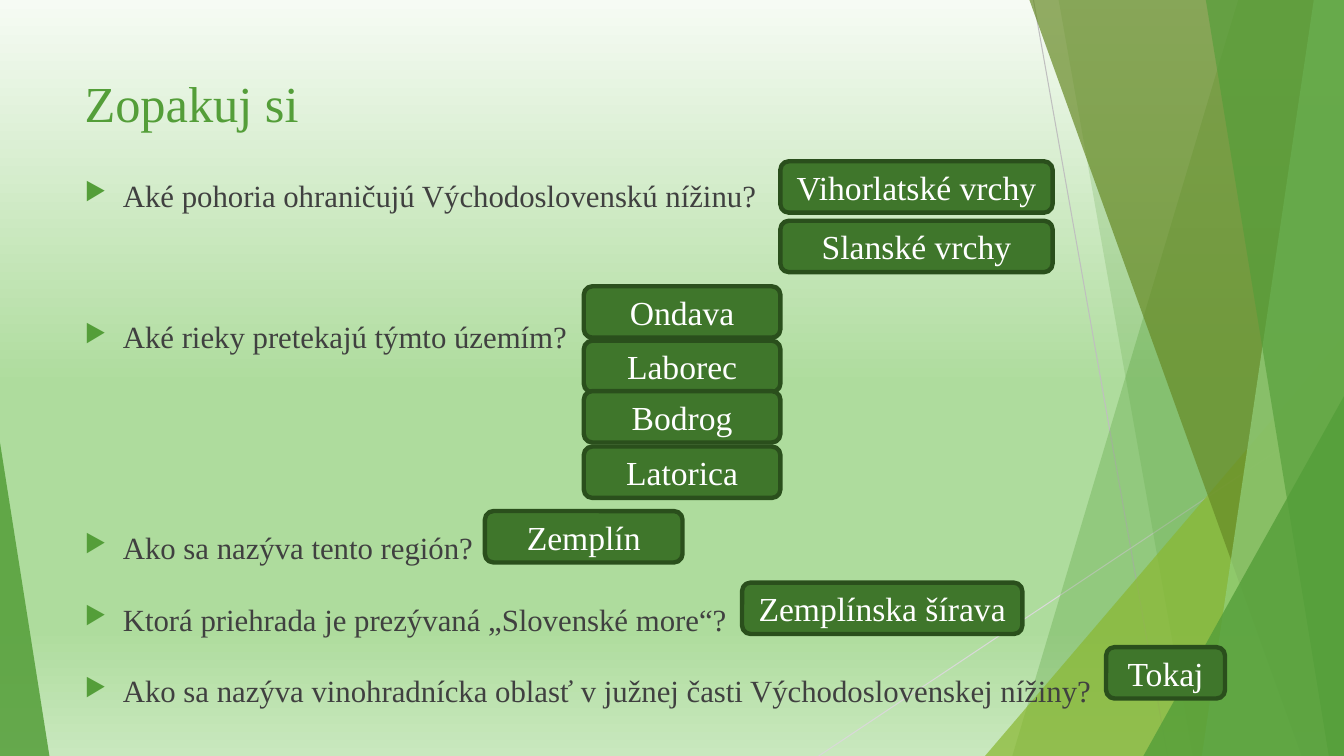
from lxml import etree
from pptx import Presentation
from pptx.dml.color import RGBColor
from pptx.enum.shapes import MSO_CONNECTOR, MSO_SHAPE
from pptx.enum.text import MSO_ANCHOR, PP_ALIGN
from pptx.oxml.ns import qn
from pptx.util import Inches, Pt

STRAIGHT = MSO_CONNECTOR.STRAIGHT
TRIANGLE, ROUNDED = MSO_SHAPE.RIGHT_TRIANGLE, MSO_SHAPE.ROUNDED_RECTANGLE
TRIANGLE = MSO_SHAPE.ISOSCELES_TRIANGLE
TOP, MIDDLE, CENTER = MSO_ANCHOR.TOP, MSO_ANCHOR.MIDDLE, PP_ALIGN.CENTER
W, H = 13.33, 7.5


def rgb(color):
    return RGBColor.from_string(color)


def child(parent, tag, **attrs):
    return etree.SubElement(parent, qn(tag), {k: str(v) for k, v in attrs.items()})


class Deck:
    FONT, GREEN, TEXT = "Times New Roman", "549E39", "404040"
    BOX, BORDER, WHITE = "3F762B", "2A4F1C", "FFFFFF"

    def __init__(self):
        self.prs = Presentation()
        self.prs.slide_width, self.prs.slide_height = Inches(W), Inches(H)
        self.s = self.prs.slides.add_slide(self.prs.slide_layouts[6])

    def background(self, stops):
        fill = self.s.background.fill
        fill.gradient()
        fill.gradient_angle = 270
        stop_list = self.s.element.find(".//" + qn("a:gsLst"))
        for stop in list(stop_list):
            stop_list.remove(stop)
        for pos, color in stops:
            child(child(stop_list, "a:gs", pos=pos * 1000), "a:srgbClr", val=color)

    def paint(self, sp, color, opacity):
        sp.shadow.inherit = False
        sp.fill.solid()
        sp.fill.fore_color.rgb = rgb(color)
        sp.line.fill.background()
        clr = sp.fill._xPr.find(".//" + qn("a:srgbClr"))
        child(clr, "a:alpha", val=opacity * 1000)

    def line(self, x1, y1, x2, y2, color):
        c = self.s.shapes.add_connector(STRAIGHT, *map(Inches, (x1, y1, x2, y2)))
        c.line.color.rgb = rgb(color)
        c.line.width = Pt(0.75)
        child(c._element.spPr, "a:effectLst")

    def band(self, top_x, bottom_x, color, opacity):
        """Area between a slanted edge and the right side of the slide."""
        start, *rest = [(Inches(x), Inches(y)) for x, y in
                        ((top_x, 0), (W, 0), (W, H), (bottom_x, H))]
        builder = self.s.shapes.build_freeform(*start)
        builder.add_line_segments(rest, close=True)
        self.paint(builder.convert_to_shape(), color, opacity)

    def triangle(self, x, y, w, apex, color, opacity):
        sp = self.s.shapes.add_shape(TRIANGLE, *map(Inches, (x, y, w, H - y)))
        sp.adjustments[0] = apex
        self.paint(sp, color, opacity)

    def style(self, p, size, color):
        p.font.name, p.font.size, p.font.color.rgb = self.FONT, Pt(size), rgb(color)

    def text_box(self, x, y, w, h):
        tf = self.s.shapes.add_textbox(*map(Inches, (x, y, w, h))).text_frame
        tf.word_wrap = True
        tf.vertical_anchor = TOP
        return tf

    def title(self, text, *place):
        p = self.text_box(*place).paragraphs[0]
        p.text = text
        self.style(p, 36, self.GREEN)

    def questions(self, items, *place):
        tf = self.text_box(*place)
        for i, (text, skipped_lines) in enumerate(items):
            p = tf.add_paragraph() if i else tf.paragraphs[0]
            p.text = text
            p.line_spacing = 1.5
            p.space_before = Pt(11.7 + 49.6 * skipped_lines if i else 10)
            self.style(p, 22, self.TEXT)
            pPr = p._p.get_or_add_pPr()
            pPr.set("marL", str(Inches(0.38)))
            pPr.set("indent", str(-Inches(0.38)))
            bullet = [etree.Element(qn(tag)) for tag in ("a:buClr", "a:buSzPct", "a:buChar")]
            child(bullet[0], "a:srgbClr", val=self.GREEN)
            bullet[1].set("val", "80000")
            bullet[2].set("char", "▶")
            at = pPr.index(pPr.find(qn("a:defRPr")))
            pPr[at:at] = bullet

    def answer(self, text, x, y, w):
        sp = self.s.shapes.add_shape(ROUNDED, *map(Inches, (x, y, w, 0.51)))
        sp.shadow.inherit = False
        sp.fill.solid()
        sp.fill.fore_color.rgb = rgb(self.BOX)
        sp.line.color.rgb = rgb(self.BORDER)
        sp.line.width = Pt(3.15)
        tf = sp.text_frame
        tf.word_wrap = True
        tf.vertical_anchor = MIDDLE
        p = tf.paragraphs[0]
        p.text = text
        p.alignment = CENTER
        self.style(p, 24, self.WHITE)


def main():
    d = Deck()

    # Background and decorative facets
    d.background([(0, "F6FBF4"), (51, "AEDC9D"), (83, "AEDC9D"), (100, "C9E8BE")])
    d.line(10.25, 0, 11.58, H, "BFBFBF")
    d.line(W, 4.03, 8.12, H, "D9D9D9")
    d.band(12.28, 10.04, d.GREEN, 30)
    d.band(10.5, 11.83, d.GREEN, 20)
    d.triangle(9.77, 3.33, 3.56, 1, "8AB833", 72)
    d.band(10.21, 12.91, "678A26", 70)
    d.band(13.03, 11.92, "93D07D", 70)
    d.band(11.96, 13.18, d.GREEN, 65)
    d.triangle(11.34, 3.93, 1.99, 1, d.GREEN, 80)
    d.triangle(0, 4.39, 0.49, 0, d.GREEN, 85)

    # Title and questions, each with the lines left free above it
    d.title("Zopakuj si", 0.74, 0.67, 9.4, 0.8)
    d.questions([
        ("Aké pohoria ohraničujú Východoslovenskú nížinu?", 0),
        ("Aké rieky pretekajú týmto územím?", 1),
        ("Ako sa nazýva tento región?", 2),
        ("Ktorá priehrada je prezývaná „Slovenské more“?", 0),
        ("Ako sa nazýva vinohradnícka oblasť v južnej časti Východoslovenskej nížiny?", 0),
    ], 0.74, 1.52, 11.41, 5.9)

    # Answers
    for text, x, y, w in [
        ("Vihorlatské vrchy", 7.74, 1.6, 2.7),
        ("Slanské vrchy", 7.74, 2.19, 2.7),
        ("Ondava", 5.79, 2.84, 1.95),
        ("Laborec", 5.79, 3.38, 1.95),
        ("Bodrog", 5.79, 3.88, 1.95),
        ("Zemplín", 4.81, 5.07, 1.96),
        ("Latorica", 5.79, 4.43, 1.95),
        ("Tokaj", 10.97, 6.42, 1.18),
        ("Zemplínska šírava", 7.36, 5.78, 2.78),
    ]:
        d.answer(text, x, y, w)

    d.prs.save("out.pptx")


if __name__ == "__main__":
    main()
